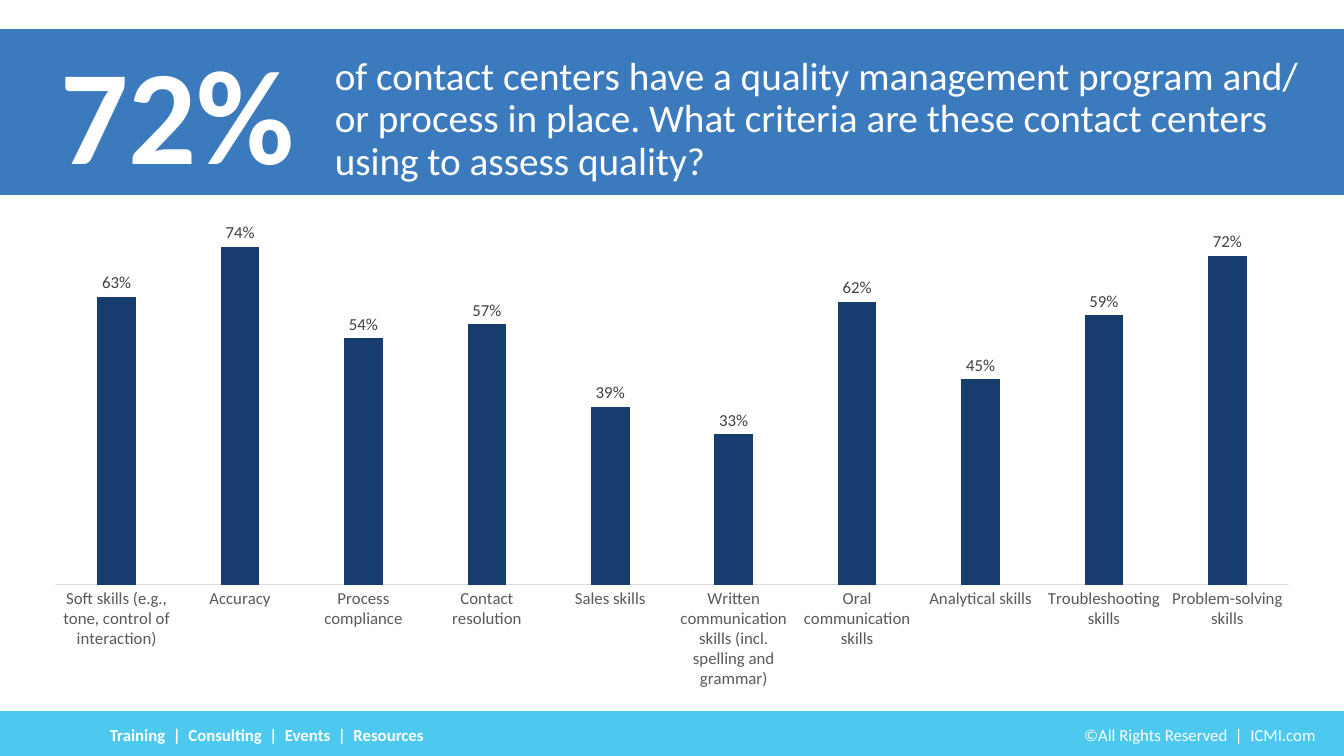
from pptx import Presentation
from pptx.chart.data import CategoryChartData
from pptx.dml.color import RGBColor
from pptx.enum.chart import XL_CHART_TYPE, XL_LABEL_POSITION, XL_TICK_MARK
from pptx.enum.shapes import MSO_SHAPE
from pptx.enum.text import MSO_ANCHOR, MSO_AUTO_SIZE, PP_ALIGN
from pptx.oxml.xmlchemy import OxmlElement
from pptx.util import Inches, Pt

WHITE = RGBColor(0xFF, 0xFF, 0xFF)
BLACK = RGBColor(0x00, 0x00, 0x00)
SKY = RGBColor(0x4D, 0xC8, 0xEF)
BLUE = RGBColor(0x3C, 0x7A, 0xBE)
NAVY = RGBColor(0x17, 0x3D, 0x6E)
AXIS_GRAY = RGBColor(0xD9, 0xD9, 0xD9)
CATEGORY_GRAY = RGBColor(0x59, 0x59, 0x59)
LABEL_GRAY = RGBColor(0x40, 0x40, 0x40)


def style_font(font, size, color, bold=False):
    font.name = "Calibri"
    font.size = Pt(size)
    font.color.rgb = color
    font.bold = bold


def fill_text(box, text, size, align, bold, anchor):
    frame = box.text_frame
    frame.word_wrap = True
    frame.auto_size = MSO_AUTO_SIZE.NONE
    frame.vertical_anchor = anchor
    paragraph = frame.paragraphs[0]
    paragraph.text = text
    paragraph.alignment = align
    paragraph.space_before = Pt(0)
    style_font(paragraph.font, size, WHITE, bold)
    return paragraph


deck = Presentation()
deck.slide_width = Inches(13.33)
deck.slide_height = Inches(7.5)
page = deck.slides.add_slide(deck.slide_layouts[1])

bands = [(0.29, 1.64, BLUE), (7.06, 0.44, SKY)]
for position, (top, height, color) in enumerate(bands):
    band = page.shapes.add_shape(
        MSO_SHAPE.RECTANGLE, 0, Inches(top), deck.slide_width, Inches(height))
    band.shadow.inherit = False
    band.fill.solid()
    band.fill.fore_color.rgb = color
    band.line.color.rgb = color
    band.line.width = Pt(1)
    page.shapes._spTree.insert(2 + position, band._element)

headline = page.shapes.title
headline.left, headline.top = Inches(0.42), Inches(0.25)
headline.width, headline.height = Inches(2.68), Inches(1.72)
fill_text(headline, "72%", 96, PP_ALIGN.CENTER, True, MSO_ANCHOR.TOP)

question = page.placeholders[1]
question.left, question.top = Inches(3.22), Inches(0.51)
question.width, question.height = Inches(9.82), Inches(1.57)
paragraph = fill_text(
    question,
    "of contact centers have a quality management program and/ or process in place. "
    "What criteria are these contact centers using to assess quality?",
    28, PP_ALIGN.LEFT, False, MSO_ANCHOR.TOP)
paragraph.line_spacing = 0.9
properties = paragraph._p.get_or_add_pPr()
properties.set("marL", "0")
properties.set("indent", "0")
properties.insert_element_before(OxmlElement("a:buNone"), "a:tabLst", "a:defRPr", "a:extLst")

footers = [
    (0.99, "Training  |  Consulting  |  Events  |  Resources", PP_ALIGN.LEFT, True),
    (8.96, "©All Rights Reserved  |  ICMI.com", PP_ALIGN.RIGHT, False),
]
for left, text, align, bold in footers:
    footer = page.shapes.add_textbox(Inches(left), Inches(7.14), Inches(4.19), Inches(0.3))
    fill_text(footer, text, 12, align, bold, MSO_ANCHOR.TOP)

criteria = {
    "Soft skills (e.g., tone, control of interaction)": 0.63,
    "Accuracy": 0.74,
    "Process compliance": 0.54,
    "Contact resolution": 0.57,
    "Sales skills": 0.39,
    "Written communication skills (incl. spelling and grammar)": 0.33,
    "Oral communication skills": 0.62,
    "Analytical skills": 0.45,
    "Troubleshooting skills": 0.59,
    "Problem-solving skills": 0.72,
}
chart_data = CategoryChartData(number_format="0%")
chart_data.categories = list(criteria)
chart_data.add_series("Series 1", list(criteria.values()))
chart = page.shapes.add_chart(
    XL_CHART_TYPE.COLUMN_CLUSTERED, Inches(0.29), Inches(2.08),
    Inches(12.75), Inches(4.85), chart_data).chart
chart.has_legend = False
chart.has_title = False
style_font(chart.font, 10, BLACK)

category_axis = chart.category_axis
category_axis.major_tick_mark = XL_TICK_MARK.NONE
category_axis.minor_tick_mark = XL_TICK_MARK.NONE
category_axis.format.line.color.rgb = AXIS_GRAY
category_axis.format.line.width = Pt(0.75)
style_font(category_axis.tick_labels.font, 12, CATEGORY_GRAY)

value_axis = chart.value_axis
value_axis.minimum_scale = 0
value_axis.maximum_scale = 0.8
value_axis.has_major_gridlines = False
value_axis.visible = False

plot = chart.plots[0]
plot.gap_width = 219
plot.overlap = -27
plot.vary_by_categories = False
plot.series[0].format.fill.solid()
plot.series[0].format.fill.fore_color.rgb = NAVY
plot.has_data_labels = True
labels = plot.data_labels
labels.show_value = True
labels.position = XL_LABEL_POSITION.OUTSIDE_END
labels.number_format = "0%"
labels.number_format_is_linked = False
style_font(labels.font, 12, LABEL_GRAY)

deck.save("out.pptx")
